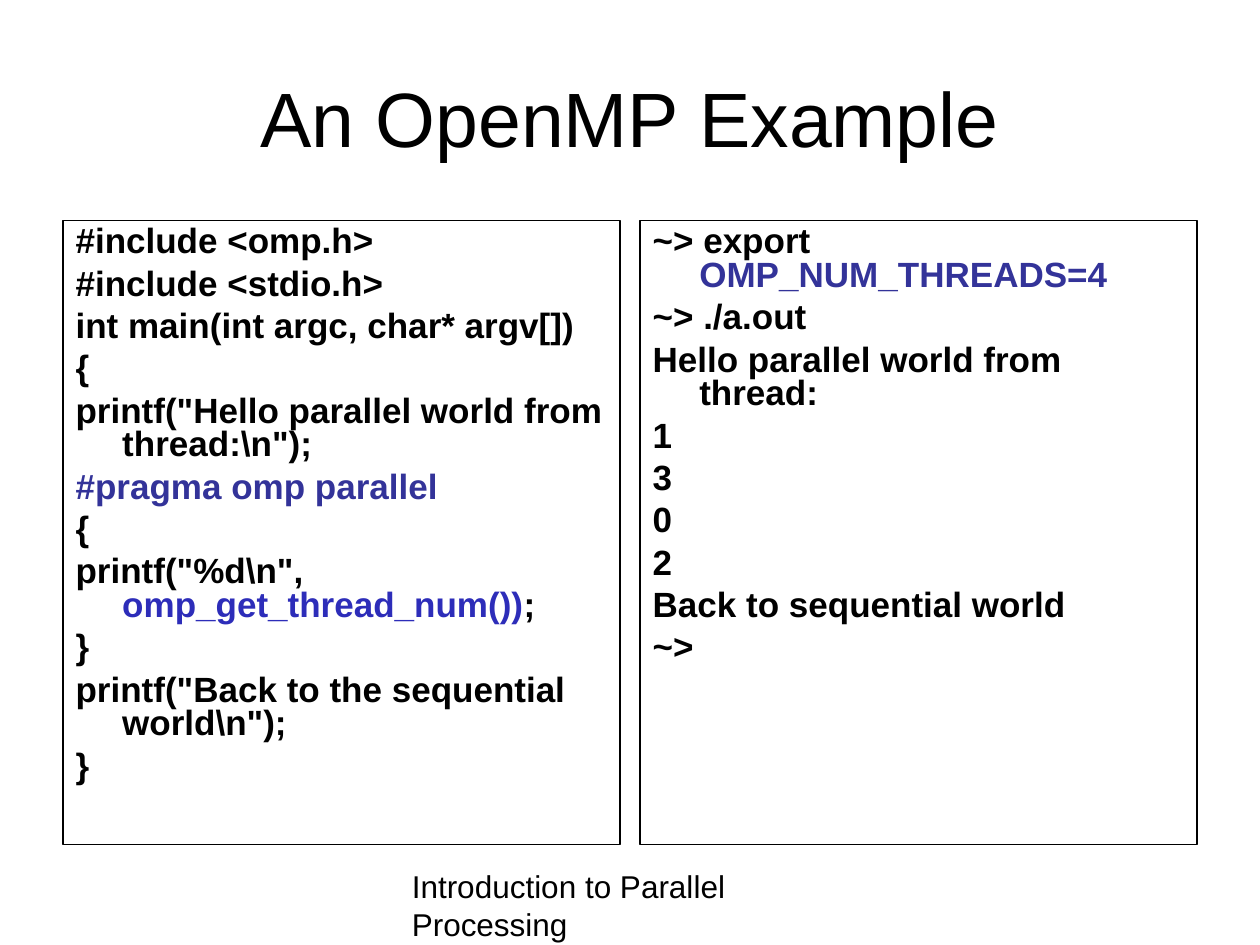
from dataclasses import dataclass

from lxml.etree import SubElement
from pptx import Presentation
from pptx.dml.color import RGBColor
from pptx.enum.text import MSO_ANCHOR, MSO_AUTO_SIZE, PP_ALIGN
from pptx.oxml.ns import qn
from pptx.util import Inches, Pt


@dataclass(frozen=True)
class Theme:
    font: str = "Arial"
    ink: str = "000000"
    directive: str = "333399"
    call: str = "2D2DB9"
    title_size: int = 44
    code_size: int = 20
    footer_size: int = 18


THEME = Theme()

# Each line is a list of (text, colour) runs, or a plain string in ink
SOURCE_CODE = [
    "#include <omp.h>",
    "#include <stdio.h>",
    "int main(int argc, char* argv[])",
    "{",
    'printf("Hello parallel world from thread:\\n");',
    [("#pragma omp parallel", THEME.directive)],
    "{",
    [('printf("%d\\n", ', THEME.ink),
     ("omp_get_thread_num())", THEME.call),
     (";", THEME.ink)],
    "}",
    'printf("Back to the sequential world\\n");',
    "}",
]
SESSION = [
    [("~> export ", THEME.ink), ("OMP_NUM_THREADS=4", THEME.directive)],
    "~> ./a.out",
    "Hello parallel world from thread:",
    "1",
    "3",
    "0",
    "2",
    "Back to sequential world",
    "~>",
]

# Panel grid
MARGIN, PANEL_TOP, PANEL_WIDTH, PANEL_HEIGHT, GAP = 0.5, 1.75, 4.42, 4.95, 0.16
HANGING = 0.37


def place(shape, left, top, width, height):
    shape.left, shape.top = Inches(left), Inches(top)
    shape.width, shape.height = Inches(width), Inches(height)


def add_run(paragraph, text, size, color=THEME.ink, bold=False):
    run = paragraph.add_run()
    run.text = text
    run.font.name = THEME.font
    run.font.size = Pt(size)
    run.font.bold = bold
    run.font.color.rgb = RGBColor.from_string(color)


def fill_title(title, text):
    place(title, MARGIN, 0.3, 9, 1.25)
    frame = title.text_frame
    frame.auto_size = MSO_AUTO_SIZE.NONE
    frame.vertical_anchor = MSO_ANCHOR.MIDDLE
    heading = frame.paragraphs[0]
    heading.alignment = PP_ALIGN.CENTER
    add_run(heading, text, THEME.title_size)


def format_code_line(paragraph, is_first):
    properties = paragraph._p.get_or_add_pPr()
    properties.set("marL", str(Inches(HANGING)))
    properties.set("indent", str(-Inches(HANGING)))
    SubElement(properties, qn("a:buNone"))
    paragraph.line_spacing = 0.8
    paragraph.space_before = Pt(0 if is_first else 5)


def fill_code_panel(panel, column, lines):
    left = MARGIN + column * (PANEL_WIDTH + GAP)
    place(panel, left, PANEL_TOP, PANEL_WIDTH, PANEL_HEIGHT)
    panel.line.color.rgb = RGBColor.from_string(THEME.ink)
    panel.line.width = Pt(0.75)
    frame = panel.text_frame
    frame.auto_size = MSO_AUTO_SIZE.NONE
    for number, line in enumerate(lines):
        paragraph = frame.add_paragraph() if number else frame.paragraphs[0]
        format_code_line(paragraph, number == 0)
        runs = [(line, THEME.ink)] if isinstance(line, str) else line
        for text, color in runs:
            add_run(paragraph, text, THEME.code_size, color, bold=True)


def add_footer(slide, text):
    footer = slide.shapes.add_textbox(
        Inches(3.17), Inches(6.83), Inches(3.66), Inches(0.52))
    footer.text_frame.word_wrap = True
    add_run(footer.text_frame.paragraphs[0], text, THEME.footer_size)


def main():
    deck = Presentation()
    deck.slide_width, deck.slide_height = Inches(10), Inches(7.5)
    two_content = deck.slide_layouts[3]
    slide = deck.slides.add_slide(two_content)

    # Heading
    fill_title(slide.shapes.title, "An OpenMP Example")

    # Program on the left, its terminal session on the right
    for column, lines in enumerate([SOURCE_CODE, SESSION]):
        fill_code_panel(slide.placeholders[column + 1], column, lines)

    # Course name
    add_footer(slide, "Introduction to Parallel Processing")

    deck.save("out.pptx")


if __name__ == "__main__":
    main()
